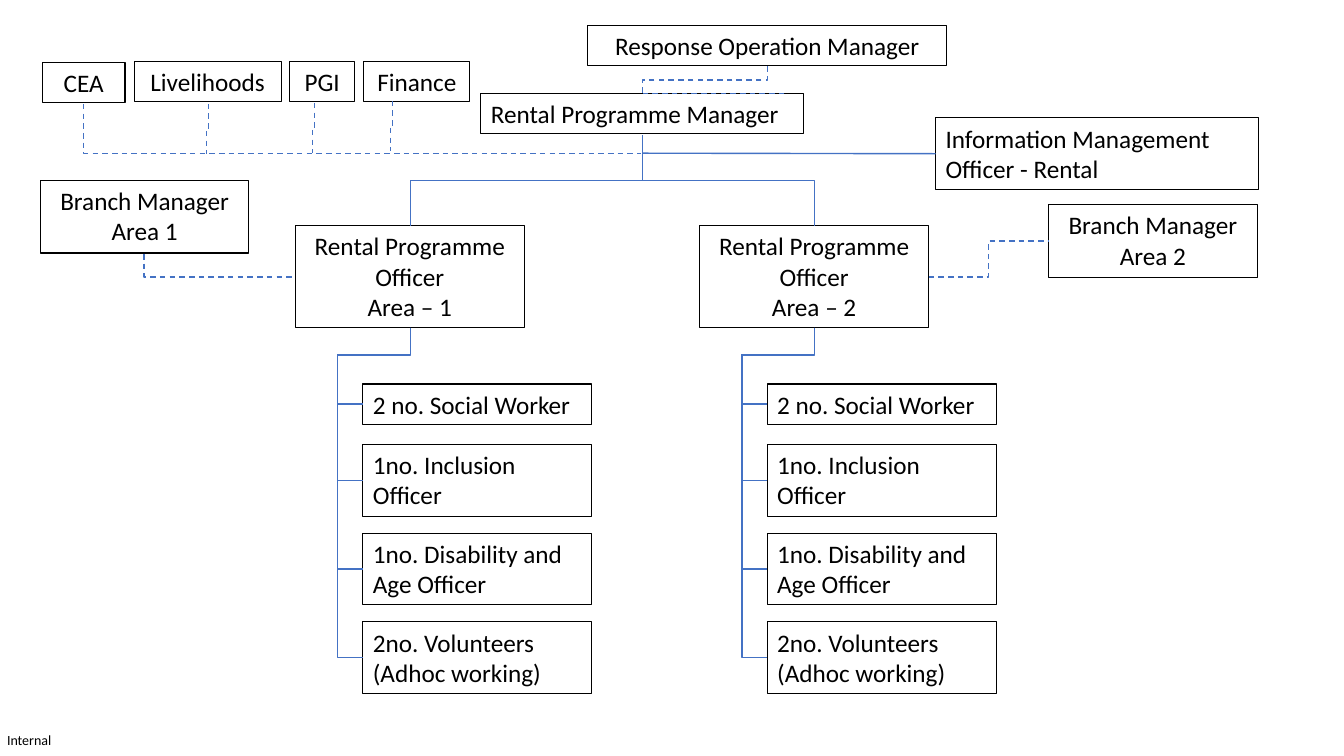
from pptx import Presentation
from pptx.util import Inches, Pt
from pptx.dml.color import RGBColor
from pptx.enum.dml import MSO_LINE as Dash
from pptx.enum.shapes import MSO_CONNECTOR as Conn
from pptx.enum.text import PP_ALIGN as Align, MSO_AUTO_SIZE as Fit
from pptx.oxml.ns import qn
from lxml.etree import SubElement as sub

BLACK = RGBColor(0x00, 0x00, 0x00)
BLUE = RGBColor(0x44, 0x72, 0xC4)

deck = Presentation()
deck.slide_width, deck.slide_height = Inches(13.33), Inches(7.5)
slide = deck.slides.add_slide(deck.slide_layouts[6])


def box(text, x, y, w, h, align=Align.CENTER, size=18, edge=True):
    """Place a text box; each line of text is a paragraph."""
    shape = slide.shapes.add_textbox(Inches(x), Inches(y), Inches(w), Inches(h))
    frame = shape.text_frame
    frame.word_wrap = edge
    frame.auto_size = Fit.SHAPE_TO_FIT_TEXT
    frame.text = text
    for para in frame.paragraphs:
        para.alignment = align
        para.font.size, para.font.name = Pt(size), "Calibri"
        para.font.color.rgb = BLACK
    if edge:
        shape.line.color.rgb, shape.line.width = BLACK, Pt(0.75)
    else:
        frame.margin_left = frame.margin_top = 0
        frame.margin_right = frame.margin_bottom = 0
    return shape


def link(x1, y1, x2, y2, bends=0, adj=(), dash=False, down=True):
    """Draw a line with the given number of bends, leaving downwards or sideways."""
    kind = Conn.ELBOW if bends else Conn.STRAIGHT
    line = slide.shapes.add_connector(
        kind, Inches(x1), Inches(y1), Inches(x2), Inches(y2))
    line.line.color.rgb, line.line.width = BLUE, Pt(1)
    if dash:
        line.line.dash_style = Dash.DASH
    props = line._element.spPr
    sub(props, qn("a:effectLst"))
    if bends:
        geom = props.find(qn("a:prstGeom"))
        geom.set("prst", f"bentConnector{bends + 1}")
        guides = geom.find(qn("a:avLst"))
        if guides is None:
            guides = sub(geom, qn("a:avLst"))
        for i, part in enumerate(adj, 1):
            sub(guides, qn("a:gd"), name=f"adj{i}", fmla=f"val {round(part * 100000)}")
        if down:
            # Turn the frame a quarter so that the first leg runs downwards
            wide, high = y2 - y1, abs(x2 - x1)
            line.left = Inches((x1 + x2 - wide) / 2)
            line.top = Inches((y1 + y2 - high) / 2)
            line.width, line.height = Inches(wide), Inches(high)
            frame = props.find(qn("a:xfrm"))
            frame.set("rot", str((90 if x2 < x1 else 270) * 60000))
            frame.set("flipH", "0" if x2 < x1 else "1")
    return line


# Footer label
box("Internal", 0.07, 7.26, 0.47, 0.17, align=Align.LEFT, size=10, edge=False)

# Managers
box("Rental Programme Manager", 4.77, 0.93, 3.2, 0.4, align=Align.LEFT)
box("Response Operation Manager", 5.83, 0.25, 3.56, 0.4)
link(7.61, 0.66, 6.37, 0.93, bends=2, dash=True)
link(7.78, 0.93, 6.37, 0.93, dash=True)

# Information officer
info = box("Information Management Officer - Rental", 9.28, 1.17, 3.2, 0.71,
           align=Align.LEFT)
link(9.28, 1.52, 6.37, 1.52).begin_connect(info, 1)

# Support units and their shared line
for name, x, y, w in (("CEA", 0.42, 0.62, 0.82), ("Livelihoods", 1.33, 0.61, 1.46),
                      ("PGI", 2.87, 0.61, 0.65), ("Finance", 3.61, 0.61, 1.05)):
    box(name, x, y, w, 0.4)
link(0.83, 1.03, 6.36, 1.52, bends=1, dash=True)
for x, y in ((2.07, 1.03), (3.12, 1.02), (3.89, 1.0)):
    link(x, y, x - 0.02, y + 0.5, bends=2, dash=True)

# Area officers with their teams
team = (("2 no. Social Worker", 3.81, 0.4), ("1no. Inclusion\nOfficer", 4.41, 0.71),
        ("1no. Disability and Age Officer", 5.29, 0.71),
        ("2no. Volunteers (Adhoc working)", 6.17, 0.71))
for area, x in ((1, 2.93), (2, 6.94)):
    mid, left = x + 1.14, x + 0.67
    box(f"Rental Programme Officer\nArea – {area}", x, 2.24, 2.27, 1.01)
    link(6.37, 1.34, mid, 2.24, bends=2)
    for role, y, h in team:
        box(role, left, y, 2.27, h, align=Align.LEFT)
        end = y + h / 2
        link(mid, 3.25, left, end, bends=3,
             adj=(0.27 / (end - 3.25), 0.72 / (mid - left)))

# Branch managers
box("Branch Manager Area 1", 0.4, 1.79, 2.07, 0.72)
box("Branch Manager Area 2", 10.4, 2.03, 2.07, 0.72)
link(1.43, 2.52, 2.93, 2.75, bends=1, dash=True)
link(9.21, 2.75, 10.4, 2.39, bends=2, dash=True, down=False)

deck.save("out.pptx")
